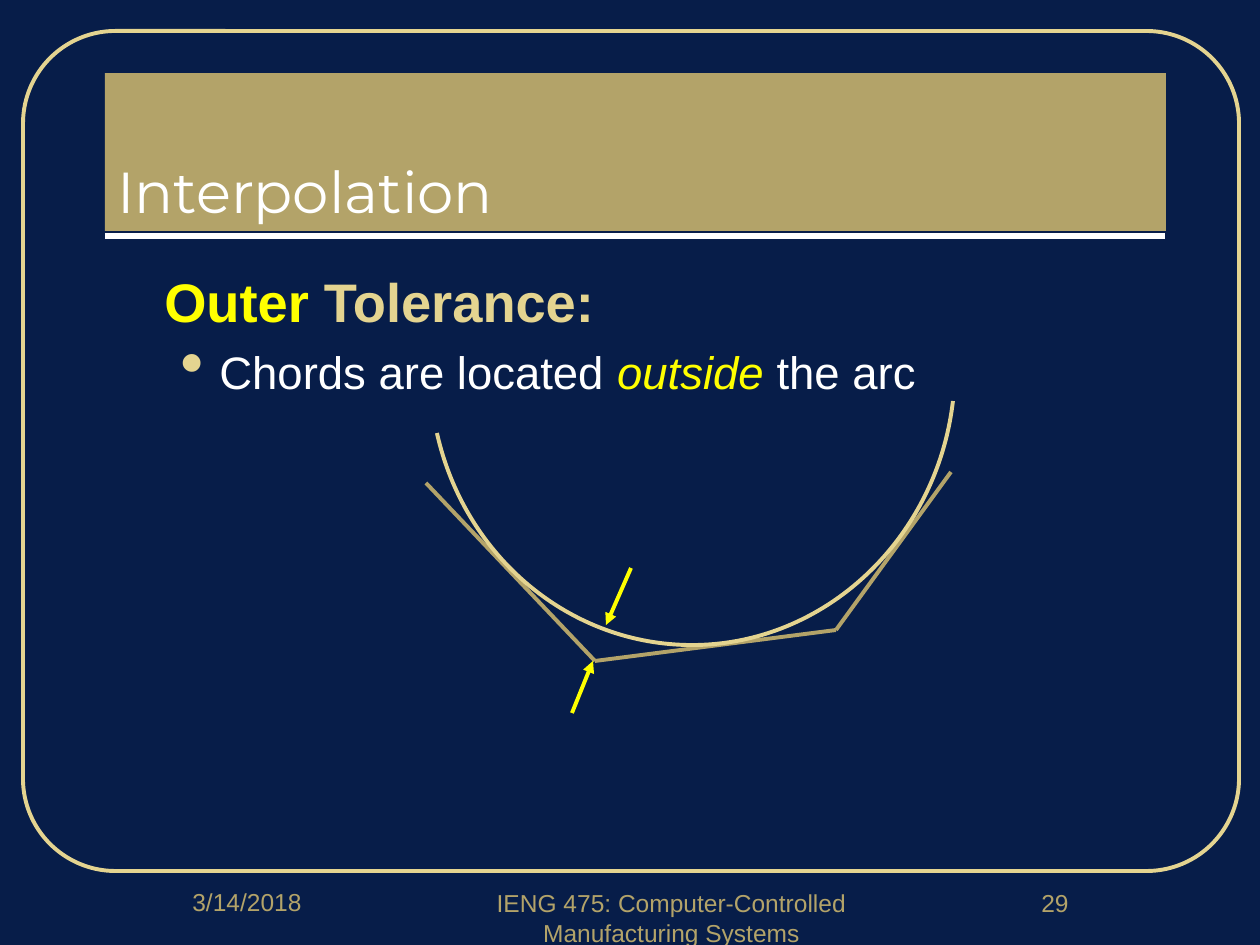
from lxml import etree
from pptx import Presentation, util as u
from pptx.dml.color import RGBColor
from pptx.enum import shapes, text
from pptx.oxml.ns import qn

NAVY = RGBColor(0x07, 0x1D, 0x49)
GOLD = RGBColor(0xB3, 0xA3, 0x69)
SAND = RGBColor(0xE4, 0xD4, 0x90)
YELLOW = RGBColor(0xFF, 0xFF, 0x00)
WHITE = RGBColor(0xFF, 0xFF, 0xFF)
EMU_PER_PX = 914400 / 126


def px(n):
    return u.Emu(round(n * EMU_PER_PX))


def add_line(s, start, end, color, width=2.25, arrow=False):
    c = s.shapes.add_connector(shapes.MSO_CONNECTOR.STRAIGHT,
                               *map(px, start + end))
    c.line.color.rgb = color
    c.line.width = u.Pt(width)
    if arrow:
        etree.SubElement(c.line._get_or_add_ln(), qn("a:tailEnd"), type="triangle")
    etree.SubElement(c._element.spPr, qn("a:effectLst"))


def outline(sp, color):
    sp.shadow.inherit = False
    sp.fill.background()
    sp.line.color.rgb = color
    sp.line.width = u.Pt(2.25)


def add_text(s, box, runs, size, font="Arial", align=text.PP_ALIGN.LEFT):
    """Text box whose single paragraph holds (wording, color) runs."""
    sp = s.shapes.add_textbox(*map(px, box))
    sp.text_frame.word_wrap = True
    write(sp.text_frame.paragraphs[0], runs, size, font, align)
    return sp


def write(p, runs, size, font="Arial", align=text.PP_ALIGN.LEFT):
    p.alignment = align
    p.font.size = u.Pt(size)
    p.font.name = font
    for wording, color in runs:
        r = p.add_run()
        r.text = wording
        r.font.color.rgb = color


def set_indent(p, left, first=0):
    pPr = p._p.get_or_add_pPr()
    pPr.set("marL", str(px(left)))
    pPr.set("indent", str(px(first)))
    return pPr


def add_bullet(pPr, char, color, percent):
    marks = [etree.Element(qn("a:buClr")),
             etree.Element(qn("a:buSzPct"), val=str(percent * 1000)),
             etree.Element(qn("a:buChar"), char=char)]
    etree.SubElement(marks[0], qn("a:srgbClr"), val=str(color))
    # Bullet marks come after spacing and before the default run properties
    at = pPr.index(pPr.find(qn("a:defRPr")))
    pPr[at:at] = marks


def add_curve(s, points, color):
    """Open Bezier curve: a start point, then three points per segment."""
    builder = s.shapes.build_freeform(*points[0], scale=EMU_PER_PX)
    builder.add_line_segments(points[1:], close=False)
    sp = builder.convert_to_shape()
    path = next(sp._element.iter(qn("a:path")))
    path.set("fill", "none")
    steps = path.findall(qn("a:lnTo"))
    for i in range(0, len(steps), 3):
        curve = etree.SubElement(path, qn("a:cubicBezTo"))
        for step in steps[i:i + 3]:
            curve.append(step[0])
            path.remove(step)
    outline(sp, color)


def add_frame(s):
    sp = s.shapes.add_shape(shapes.MSO_SHAPE.ROUNDED_RECTANGLE,
                            *map(px, (23, 31, 1216, 840)))
    sp.adjustments[0] = 0.11
    outline(sp, SAND)
    add_line(s, (105, 236), (1165, 236), WHITE, 3)


def add_title(s):
    sp = add_text(s, (105, 73, 1061, 158), [("Interpolation", WHITE)],
                  33, "Montserrat")
    sp.fill.solid()
    sp.fill.fore_color.rgb = GOLD
    sp.text_frame.vertical_anchor = text.MSO_ANCHOR.BOTTOM


def add_body(s):
    sp = add_text(s, (105, 262, 1061, 557),
                  [("Outer", YELLOW), (" Tolerance:", SAND)], 31)
    heading = sp.text_frame.paragraphs[0]
    heading.font.bold = True
    heading.space_before = u.Pt(4)
    set_indent(heading, 47)

    p = sp.text_frame.add_paragraph()
    p.level = 1
    p.space_before = u.Pt(6)
    write(p, [("Chords are located ", WHITE), ("outside", YELLOW),
              (" the arc", WHITE)], 26)
    p.runs[1].font.italic = True
    add_bullet(set_indent(p, 102, -39), "•", SAND, 150)


def add_diagram(s):
    # Chords outside the arc
    corners = [(426, 483), (595, 661), (836, 630), (951, 472)]
    for start, end in zip(corners, corners[1:]):
        add_line(s, start, end, GOLD)
    # Tolerance arrows
    add_line(s, (631, 568), (606, 625), YELLOW, arrow=True)
    add_line(s, (572, 713), (593, 661), YELLOW, arrow=True)
    # Arc
    add_curve(s, [(437, 433), (465, 558), (571, 645), (692, 645),
                  (825, 645), (937, 539), (953, 401)], SAND)


def add_footer(s):
    for left, top, width, wording in [
            (105, 881, 284, "3/14/2018"),
            (451, 882, 441, "IENG 475: Computer-Controlled Manufacturing Systems"),
            (945, 882, 220, "29")]:
        add_text(s, (left, top, width, 63), [(wording, GOLD)], 14,
                 align=text.PP_ALIGN.CENTER)


def main():
    prs = Presentation()
    prs.slide_width, prs.slide_height = px(1260), px(945)
    s = prs.slides.add_slide(prs.slide_layouts[6])
    s.background.fill.solid()
    s.background.fill.fore_color.rgb = NAVY
    add_frame(s)
    add_footer(s)
    add_title(s)
    add_body(s)
    add_diagram(s)
    prs.save("out.pptx")


if __name__ == "__main__":
    main()
